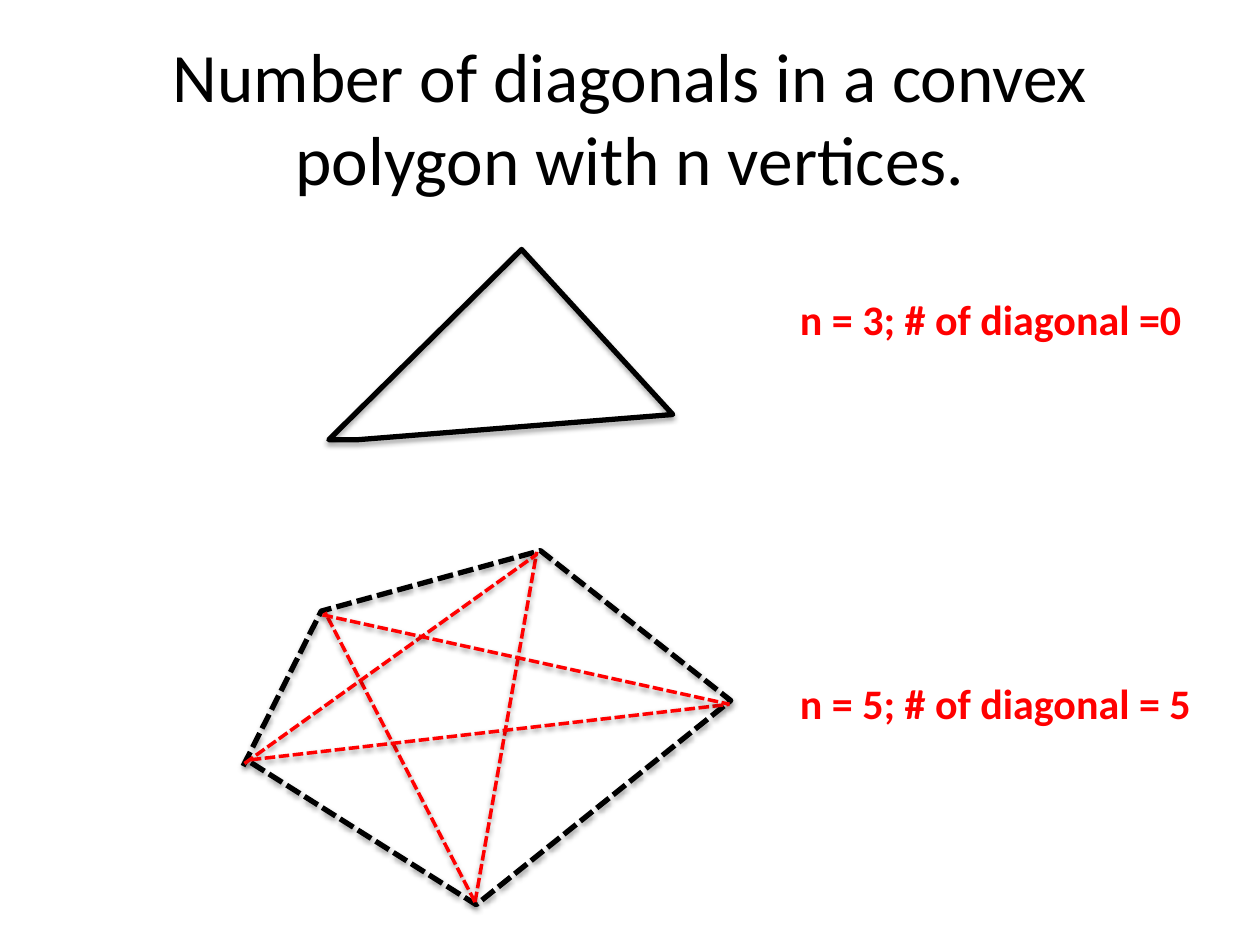
from lxml import etree
from pptx import Presentation
from pptx.dml.color import RGBColor
from pptx.enum.dml import MSO_LINE
from pptx.enum.text import MSO_ANCHOR, MSO_AUTO_SIZE, PP_ALIGN
from pptx.oxml.ns import qn
from pptx.util import Inches, Pt

DASH = MSO_LINE.SQUARE_DOT  # written as sysDash
FONT = "Calibri"
COLORS = {"ink": "000000", "accent": "FF0000"}

# Content: text
TITLE = "Number of diagonals in a convex polygon with n vertices."
NOTES = [("n = 3; # of diagonal =0", 2.28), ("n = 5; # of diagonal = 5", 5.33)]
NOTE_LEFT, NOTE_WIDTH, NOTE_HEIGHT = 6.25, 3.48, 0.5

# Content: outlines, in inches
TRIANGLE = [(2.61, 3.49), (2.84, 3.49), (5.34, 3.29), (4.14, 1.98)]
PENTAGON = [(1.93, 6.08), (2.55, 4.85), (4.29, 4.37), (5.8, 5.56),
            (3.78, 7.18), (1.94, 6.02)]
DIAGONALS = [
    [(3.77, 7.16), (4.26, 4.38)],
    [(3.77, 7.16), (2.58, 4.86)],
    [(1.94, 6.06), (4.26, 4.4)],
    [(1.99, 6.03), (5.79, 5.59)],
    [(2.56, 4.88), (5.79, 5.59)],
]


def add_run(para, text, size, color, bold=False):
    span = para.add_run()
    span.text = text
    span.font.name = FONT
    span.font.size = Pt(size)
    span.font.bold = bold
    span.font.color.rgb = RGBColor.from_string(COLORS[color])


def add_shadow(shape, opacity, distance):
    shape.shadow.inherit = False
    effects = shape._element.spPr.find(qn("a:effectLst"))
    shadow = etree.SubElement(
        effects, qn("a:outerShdw"), blurRad=str(Pt(3.1)),
        dist=str(Pt(distance)), dir="5400000", rotWithShape="0")
    tint = etree.SubElement(shadow, qn("a:srgbClr"), val=COLORS["ink"])
    etree.SubElement(tint, qn("a:alpha"), val=str(opacity * 1000))


def add_outline(page, points, color, width, dash=DASH, close=False,
                opacity=38, distance=1.6):
    corners = [(Inches(x), Inches(y)) for x, y in points]
    builder = page.shapes.build_freeform(*corners[0])
    builder.add_line_segments(corners[1:], close=close)
    shape = builder.convert_to_shape()
    shape.fill.background()
    shape.line.color.rgb = RGBColor.from_string(COLORS[color])
    shape.line.width = Pt(width)
    shape.line.dash_style = dash
    add_shadow(shape, opacity, distance)


def add_note(page, text, top):
    box = page.shapes.add_textbox(Inches(NOTE_LEFT), Inches(top),
                                  Inches(NOTE_WIDTH), Inches(NOTE_HEIGHT))
    box.text_frame.word_wrap = True
    box.text_frame.auto_size = MSO_AUTO_SIZE.SHAPE_TO_FIT_TEXT
    add_run(box.text_frame.paragraphs[0], text, 24, "accent", bold=True)


def main():
    deck = Presentation()
    deck.slide_width, deck.slide_height = Inches(10), Inches(7.5)
    page = deck.slides.add_slide(deck.slide_layouts[5])

    # Title
    title = page.shapes.title
    title.left, title.top = Inches(0.5), Inches(0.3)
    title.width, title.height = Inches(9), Inches(1.25)
    title.text_frame.vertical_anchor = MSO_ANCHOR.MIDDLE
    para = title.text_frame.paragraphs[0]
    para.alignment = PP_ALIGN.CENTER
    add_run(para, TITLE, 39.6, "ink")

    # Polygons and diagonals
    add_outline(page, TRIANGLE, "ink", 3, dash=None, close=True,
                opacity=35, distance=1.8)
    add_outline(page, PENTAGON, "ink", 3)
    for diagonal in DIAGONALS:
        add_outline(page, diagonal, "accent", 2)

    # Counts beside the polygons
    for text, top in NOTES:
        add_note(page, text, top)

    deck.save("out.pptx")


if __name__ == "__main__":
    main()
